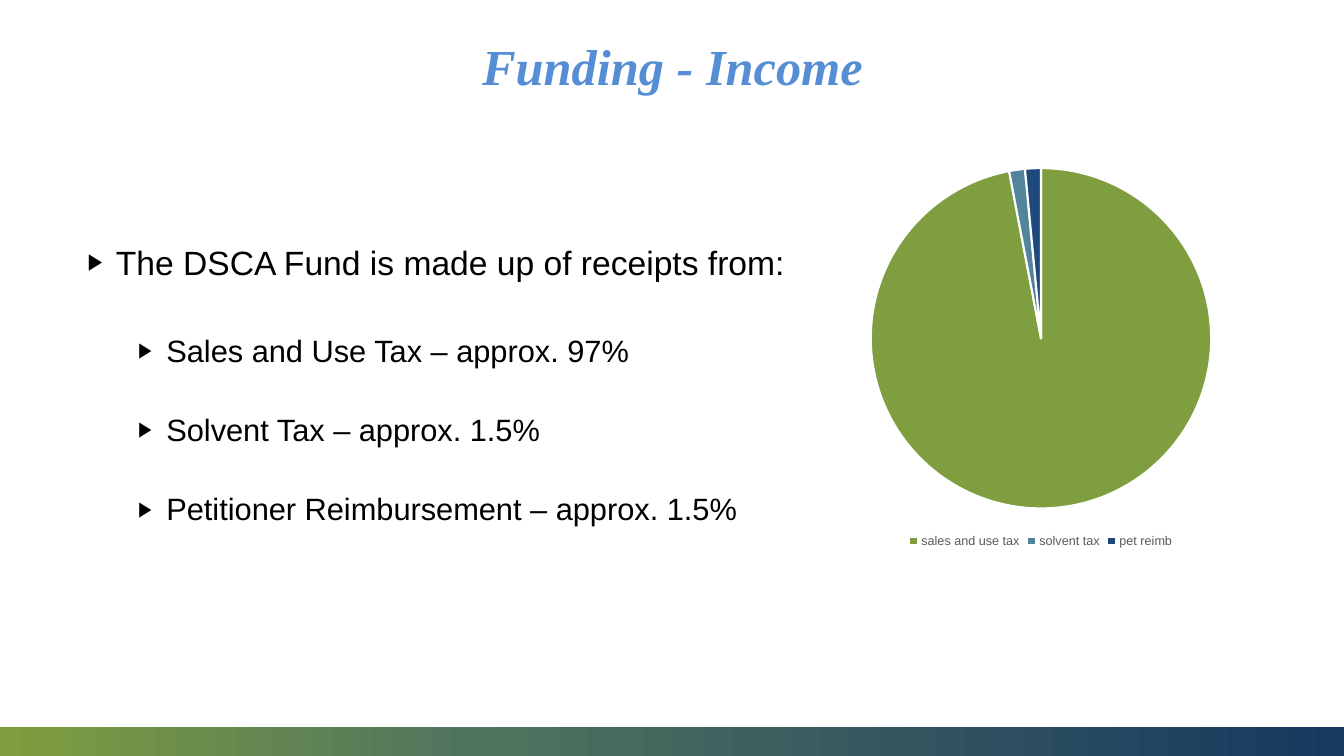
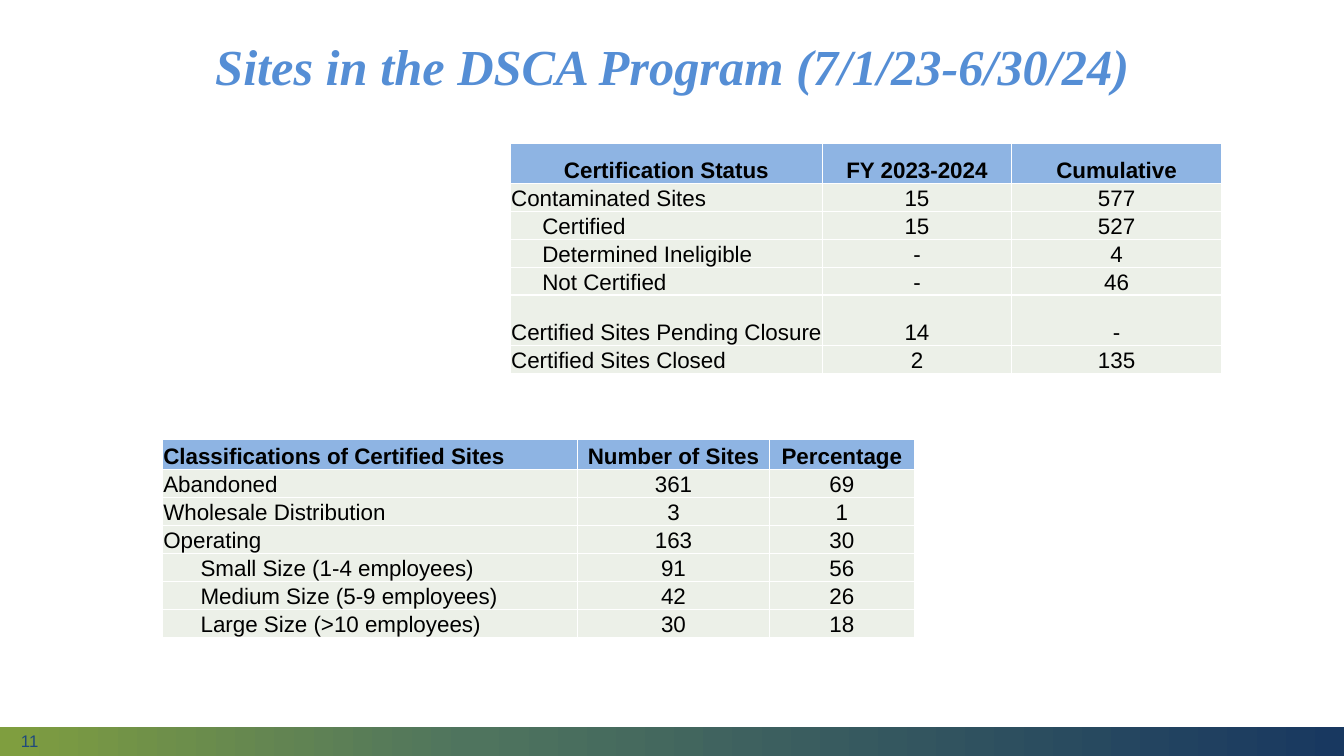
from copy import deepcopy
from dataclasses import dataclass

from lxml import etree
from pptx import Presentation
from pptx.chart.data import CategoryChartData
from pptx.dml.color import RGBColor
from pptx.enum import chart as charts, shapes, text
from pptx.oxml import ns
from pptx.slide import Slide
from pptx.table import _Cell
from pptx.util import Inches, Pt


@dataclass(frozen=True)
class Theme:
    """Colours, fonts and type sizes of the deck."""
    title: str = "558ED5"
    ink: str = "000000"
    white: str = "FFFFFF"
    legend: str = "595959"
    number: str = "1F497D"
    header: str = "8EB4E3"
    row: str = "ECF0E8"
    slices: tuple[str, ...] = ("7F9E3F", "52849C", "1F497D")
    band: tuple[tuple[float, str], ...] = (
        (0, "7F9E3F"), (0.35, "4F745E"), (1, "183860"))
    serif: str = "Times New Roman"
    sans: str = "Arial"
    title_size: float = 36
    table_size: float = 16
    number_size: float = 12
    legend_size: float = 9


@dataclass(frozen=True)
class Bullet:
    words: str
    level: int
    indent: float
    size: float
    before: float


@dataclass(frozen=True)
class SiteTable:
    left: float
    top: float
    widths: tuple[float, ...]
    heights: tuple[float, ...]
    indent: float
    indented: range
    header_align: text.PP_ALIGN
    rows: tuple[tuple[str, ...], ...]


THEME = Theme()
ROW = 0.26

RECEIPTS = (
    Bullet("The DSCA Fund is made up of receipts from:", 1, 0.4, 24, 0),
    Bullet("Sales and Use Tax – approx. 97%", 2, 0.9, 22, 38),
    Bullet("Solvent Tax – approx. 1.5%", 2, 0.9, 22, 33),
    Bullet("Petitioner Reimbursement – approx. 1.5%", 2, 0.9, 22, 33),
)
INCOME = {"sales and use tax": 97, "solvent tax": 1.5, "pet reimb": 1.5}

CERTIFICATION = SiteTable(
    5.06, 1.42, (3.1, 1.87, 2.09), (0.4, *[ROW] * 4, 0.5, ROW),
    0.32, range(2, 5), text.PP_ALIGN.CENTER, (
        ("Certification Status", "FY 2023-2024", "Cumulative"),
        ("Contaminated Sites", "15", "577"),
        ("Certified", "15", "527"),
        ("Determined Ineligible", "-", "4"),
        ("Not Certified", "-", "46"),
        ("Certified Sites Pending Closure", "14", "-"),
        ("Certified Sites Closed", "2", "135"),
    ))
CLASSIFICATION = SiteTable(
    1.61, 4.36, (4.12, 1.9, 1.44), (0.3, *[ROW] * 6),
    0.38, range(4, 7), text.PP_ALIGN.LEFT, (
        ("Classifications of Certified Sites", "Number of Sites", "Percentage"),
        ("Abandoned", "361", "69"),
        ("Wholesale Distribution", "3", "1"),
        ("Operating", "163", "30"),
        ("Small Size (1-4 employees)", "91", "56"),
        ("Medium Size (5-9 employees)", "42", "26"),
        ("Large Size (>10 employees)", "30", "18"),
    ))


def rgb(value: str) -> RGBColor:
    return RGBColor.from_string(value)


def set_font(font, size: float, color: str, name: str = THEME.sans,
             bold: bool = False, italic: bool = False) -> None:
    font.size, font.name = Pt(size), name
    font.bold, font.italic = bold, italic
    font.color.rgb = rgb(color)


def place(shape, left: float, top: float, width: float, height: float) -> None:
    shape.left, shape.top = Inches(left), Inches(top)
    shape.width, shape.height = Inches(width), Inches(height)


# Parts that every slide shares
def add_band(slide: Slide) -> None:
    band = slide.shapes.add_shape(
        shapes.MSO_SHAPE.RECTANGLE, 0, Inches(7.21), Inches(13.33), Inches(0.29))
    band.shadow.inherit = False
    band.line.fill.background()
    band.fill.gradient()
    band.fill.gradient_angle = 0
    stops = band.element.spPr.find(ns.qn("a:gradFill")).find(ns.qn("a:gsLst"))
    stops.append(deepcopy(stops[0]))
    for stop, (position, color) in zip(band.fill.gradient_stops, THEME.band):
        stop.position = position
        stop.color.rgb = rgb(color)


def add_slide(prs, layout: int, heading: str) -> Slide:
    slide = prs.slides.add_slide(prs.slide_layouts[layout])
    add_band(slide)
    title = slide.shapes.title
    place(title, 0.92, 0.11, 11.5, 1.16)
    frame = title.text_frame
    frame.text = heading
    frame.auto_size = text.MSO_AUTO_SIZE.NONE
    frame.vertical_anchor = text.MSO_ANCHOR.MIDDLE
    line = frame.paragraphs[0]
    line.alignment, line.line_spacing = text.PP_ALIGN.CENTER, 0.9
    set_font(line.font, THEME.title_size, THEME.title, THEME.serif, True, True)
    return slide


def add_number(slide: Slide, number: str) -> None:
    box = slide.shapes.add_textbox(
        Inches(0.11), Inches(7.27), Inches(3), Inches(0.15))
    frame = box.text_frame
    frame.word_wrap = True
    frame.vertical_anchor = text.MSO_ANCHOR.MIDDLE
    frame.text = number
    set_font(frame.paragraphs[0].font, THEME.number_size, THEME.number)


# Bulleted list
def fill_bullets(body, bullets: tuple[Bullet, ...]) -> None:
    frame = body.text_frame
    frame.auto_size = text.MSO_AUTO_SIZE.NONE
    for index, bullet in enumerate(bullets):
        line = frame.add_paragraph() if index else frame.paragraphs[0]
        line.text, line.level = bullet.words, bullet.level
        props = line._p.get_or_add_pPr()
        props.set("marL", str(Inches(bullet.indent)))
        props.set("indent", str(Inches(-0.28)))
        etree.SubElement(props, ns.qn("a:buSzPct")).set("val", "68000")
        etree.SubElement(props, ns.qn("a:buChar")).set("char", "▶")
        line.line_spacing, line.space_before = 0.9, Pt(bullet.before)
        set_font(line.font, bullet.size, THEME.ink)


# Income pie
def add_income_pie(slide: Slide) -> None:
    data = CategoryChartData()
    data.categories = list(INCOME)
    data.add_series("Series 1", list(INCOME.values()))
    pie = slide.shapes.add_chart(
        charts.XL_CHART_TYPE.PIE, Inches(7.68), Inches(1.53),
        Inches(5.29), Inches(3.95), data).chart
    pie.has_title = False
    set_font(pie.font, 10, THEME.ink)
    pie.has_legend = True
    pie.legend.position = charts.XL_LEGEND_POSITION.BOTTOM
    pie.legend.include_in_layout = False
    set_font(pie.legend.font, THEME.legend_size, THEME.legend)
    pie.plots[0].vary_by_categories = True
    for index, color in enumerate(THEME.slices):
        wedge = pie.plots[0].series[0].points[index].format
        wedge.fill.solid()
        wedge.fill.fore_color.rgb = rgb(color)
        wedge.line.color.rgb = rgb(THEME.white)
        wedge.line.width = Pt(1.5)


# Site tables
def add_borders(cell: _Cell) -> None:
    props = cell._tc.get_or_add_tcPr()
    for side in ("lnL", "lnR", "lnT", "lnB"):
        edge = etree.SubElement(props, ns.qn(f"a:{side}"), w=str(Pt(1)))
        fill = etree.SubElement(edge, ns.qn("a:solidFill"))
        etree.SubElement(fill, ns.qn("a:srgbClr"), val=THEME.white)


def add_site_table(slide: Slide, spec_table: SiteTable) -> None:
    table = slide.shapes.add_table(
        len(spec_table.rows), len(spec_table.widths),
        Inches(spec_table.left), Inches(spec_table.top),
        Inches(sum(spec_table.widths)), Inches(sum(spec_table.heights))).table
    table.horz_banding = False
    for column, width in zip(table.columns, spec_table.widths):
        column.width = Inches(width)
    for r, (height, values) in enumerate(zip(spec_table.heights, spec_table.rows)):
        table.rows[r].height = Inches(height)
        for c, value in enumerate(values):
            cell = table.cell(r, c)
            indented = c == 0 and r in spec_table.indented
            cell.margin_left = Inches(spec_table.indent if indented else 0.01)
            cell.margin_right = cell.margin_top = Inches(0.01)
            cell.margin_bottom = 0
            cell.vertical_anchor = text.MSO_ANCHOR.BOTTOM
            add_borders(cell)
            cell.fill.solid()
            cell.fill.fore_color.rgb = rgb(THEME.row if r else THEME.header)
            cell.text = value
            line = cell.text_frame.paragraphs[0]
            label_align = text.PP_ALIGN.LEFT if r else spec_table.header_align
            line.alignment = text.PP_ALIGN.CENTER if c else label_align
            set_font(line.font, THEME.table_size, THEME.ink, bold=r == 0)


def main() -> None:
    prs = Presentation()
    prs.slide_width, prs.slide_height = Inches(13.33), Inches(7.5)

    funding = add_slide(prs, 1, "Funding - Income")
    receipts = funding.placeholders[1]
    place(receipts, 0.65, 2.39, 9.99, 3.58)
    fill_bullets(receipts, RECEIPTS)
    add_income_pie(funding)

    sites = add_slide(prs, 5, "Sites in the DSCA Program (7/1/23-6/30/24)")
    add_number(sites, "11")
    for site_table in (CERTIFICATION, CLASSIFICATION):
        add_site_table(sites, site_table)

    prs.save("out.pptx")


if __name__ == "__main__":
    main()
